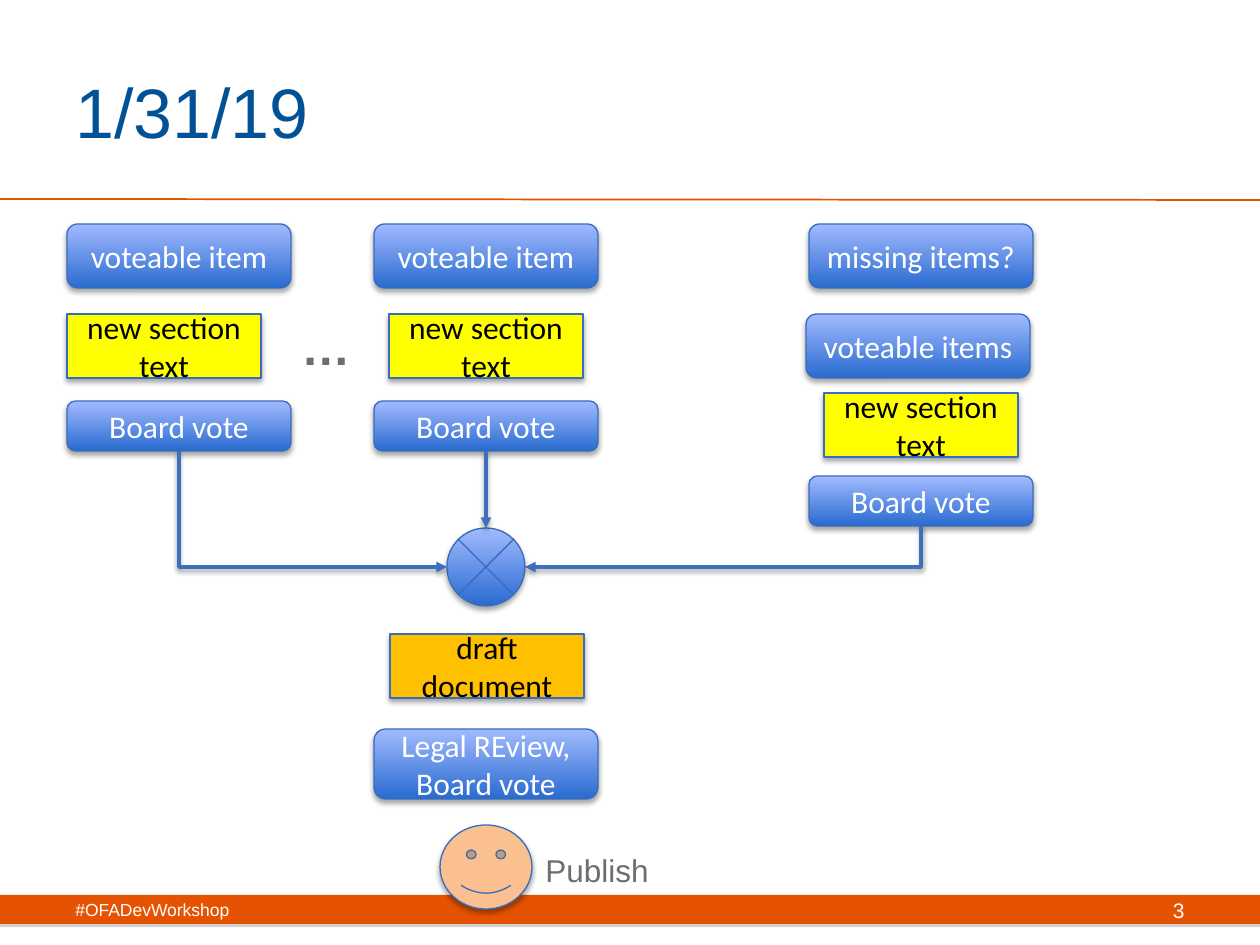
from dataclasses import dataclass

from lxml.etree import SubElement
from pptx import Presentation
from pptx.dml.color import RGBColor
from pptx.enum.shapes import MSO_CONNECTOR, MSO_SHAPE
from pptx.enum.text import MSO_ANCHOR, MSO_AUTO_SIZE, PP_ALIGN
from pptx.oxml.ns import qn
from pptx.util import Emu, Pt


@dataclass(frozen=True)
class Theme:
    white: str = "FFFFFF"
    black: str = "000000"
    orange: str = "E55302"
    title_blue: str = "005195"
    gray: str = "6D6E71"
    bar_shadow: str = "808080"
    gradient: tuple = ("296BD0", "A2BAFF")
    outline: str = "386CBC"
    arrow: str = "3C6FBD"
    yellow: str = "FFFF00"
    amber: str = "FFC000"
    skin: str = "FAC090"
    heading_font: str = "Arial"
    body_font: str = "Calibri"
    title_size: int = 40
    ellipsis_size: int = 28
    body_size: int = 18
    number_size: int = 12
    footer_size: int = 10


def px(length):
    return Emu(round(length * 914400 / 126))


class SlideBuilder:
    def __init__(self, slide, theme):
        self.slide = slide
        self.theme = theme

    def shadow(self, shape, color, opacity, blur, distance):
        properties = shape._element.spPr
        effects = properties.find(qn("a:effectLst"))
        if effects is None:
            effects = SubElement(properties, qn("a:effectLst"))
        outer = SubElement(effects, qn("a:outerShdw"), blurRad=str(Pt(blur)),
                           dist=str(Pt(distance)), dir="5400000", rotWithShape="0")
        tint = SubElement(outer, qn("a:srgbClr"), val=color)
        SubElement(tint, qn("a:alpha"), val=str(opacity * 1000))

    def add_lines(self, frame, lines, size, color, font, align, bold=False):
        frame.vertical_anchor = MSO_ANCHOR.MIDDLE
        for index, line in enumerate(lines):
            paragraph = frame.add_paragraph() if index else frame.paragraphs[0]
            paragraph.alignment = align
            run = paragraph.add_run()
            run.text = line
            run.font.size = Pt(size)
            run.font.name = font
            run.font.bold = bold
            run.font.color.rgb = RGBColor.from_string(color)

    def text(self, box, content, size, color, align=PP_ALIGN.LEFT, bold=False, wrap=True):
        frame = self.slide.shapes.add_textbox(*map(px, box)).text_frame
        frame.word_wrap = wrap
        self.add_lines(frame, [content], size, color, self.theme.heading_font, align, bold)
        if not wrap:
            frame.auto_size = MSO_AUTO_SIZE.SHAPE_TO_FIT_TEXT
            frame.vertical_anchor = MSO_ANCHOR.TOP

    def bar(self, box, color):
        shape = self.slide.shapes.add_shape(MSO_SHAPE.RECTANGLE, *map(px, box))
        shape.shadow.inherit = False
        shape.fill.solid()
        shape.fill.fore_color.rgb = RGBColor.from_string(color)
        shape.line.fill.background()
        self.shadow(shape, self.theme.bar_shadow, 35, 0, 1.8)

    def node(self, kind, box, *lines, fill=None):
        theme = self.theme
        shape = self.slide.shapes.add_shape(kind, *map(px, box))
        shape.shadow.inherit = False
        if fill:
            shape.fill.solid()
            shape.fill.fore_color.rgb = RGBColor.from_string(fill)
        else:
            shape.fill.gradient()
            shape.fill.gradient_angle = 90
            for position, (stop, color) in enumerate(zip(shape.fill.gradient_stops, theme.gradient)):
                stop.position = position
                stop.color.rgb = RGBColor.from_string(color)
        shape.line.color.rgb = RGBColor.from_string(theme.outline)
        shape.line.width = Pt(0.75)
        self.shadow(shape, theme.black, 35, 3.1, 1.8)
        self.add_lines(shape.text_frame, lines, theme.body_size,
                       theme.black if fill else theme.white, theme.body_font, PP_ALIGN.CENTER)
        return shape

    def item(self, left, top, label):
        return self.node(MSO_SHAPE.ROUNDED_RECTANGLE, (left, top, 224, 64), label)

    def process(self, left, top, label, fill):
        return self.node(MSO_SHAPE.FLOWCHART_PROCESS, (left, top, 194, 64), label, fill=fill)

    def vote(self, left, top, *lines, height=50):
        return self.node(MSO_SHAPE.FLOWCHART_ALTERNATE_PROCESS, (left, top, 224, height), *lines)

    def rule(self, start, end, color):
        line = self.slide.shapes.add_connector(MSO_CONNECTOR.STRAIGHT, *map(px, start + end))
        line.line.color.rgb = RGBColor.from_string(color)
        line.line.width = Pt(1)
        SubElement(line._element.spPr, qn("a:effectLst"))

    def finish_arrow(self, connector):
        connector.line.color.rgb = RGBColor.from_string(self.theme.arrow)
        connector.line.width = Pt(2)
        outline = connector._element.spPr.find(qn("a:ln"))
        SubElement(outline, qn("a:tailEnd"), type="triangle")
        self.shadow(connector, self.theme.black, 38, 3.1, 1.6)

    def down_arrow(self, source, target):
        connector = self.slide.shapes.add_connector(MSO_CONNECTOR.STRAIGHT, 0, 0, 0, 0)
        connector.begin_connect(source, 2)
        connector.end_connect(target, 0)
        self.finish_arrow(connector)

    def elbow_arrow(self, source, target):
        start_x = source.left + source.width // 2
        start_y = source.top + source.height
        rightward = start_x < target.left
        end_x = target.left if rightward else target.left + target.width
        end_y = target.top + target.height // 2
        center_x, center_y = (start_x + end_x) // 2, (start_y + end_y) // 2
        half_width, half_height = (end_y - start_y) // 2, abs(end_x - start_x) // 2
        connector = self.slide.shapes.add_connector(
            MSO_CONNECTOR.ELBOW, center_x - half_width, center_y - half_height,
            center_x + half_width, center_y + half_height)
        properties = connector._element.spPr
        properties.find(qn("a:prstGeom")).set("prst", "bentConnector2")
        transform = properties.find(qn("a:xfrm"))
        transform.set("rot", str((270 if rightward else 90) * 60000))
        if rightward:
            transform.set("flipH", "1")
        self.finish_arrow(connector)


def main():
    theme = Theme()
    presentation = Presentation()
    presentation.slide_width, presentation.slide_height = px(1260), px(945)
    builder = SlideBuilder(presentation.slides.add_slide(presentation.slide_layouts[6]), theme)

    builder.bar((0, 895, 1260, 29), theme.orange)
    builder.rule((0, 199), (1260, 200), theme.orange)
    builder.text((63, 32, 1029, 158), "1/31/19", theme.title_size, theme.title_blue)
    builder.text((63, 885, 399, 50), "#OFADevWorkshop", theme.footer_size, theme.white)
    builder.text((903, 885, 294, 50), "3", theme.number_size, theme.white, PP_ALIGN.RIGHT)

    votes = []
    for left, section_left, section_top, vote_top, label in (
        (67, 67, 314, 401, "voteable item"),
        (374, 389, 314, 401, "voteable item"),
        (809, 824, 393, 476, "missing items?"),
    ):
        builder.item(left, 224, label)
        builder.process(section_left, section_top, "new section text", theme.yellow)
        votes.append(builder.vote(left, vote_top, "Board vote"))
    builder.item(806, 314, "voteable items")
    builder.text((289, 310, 74, 72), "…", theme.ellipsis_size, theme.gray, bold=True, wrap=False)

    junction = builder.node(MSO_SHAPE.FLOWCHART_SUMMING_JUNCTION, (447, 528, 78, 78))
    first_vote, second_vote, missing_vote = votes
    builder.elbow_arrow(missing_vote, junction)
    builder.elbow_arrow(first_vote, junction)
    builder.down_arrow(second_vote, junction)

    builder.process(390, 634, "draft document", theme.amber)
    builder.vote(374, 729, "Legal REview,", "Board vote", height=70)
    builder.node(MSO_SHAPE.SMILEY_FACE, (440, 825, 92, 84), fill=theme.skin)
    builder.text((533, 845, 130, 50), "Publish", theme.body_size, theme.gray, wrap=False)
    presentation.save("out.pptx")


if __name__ == "__main__":
    main()
